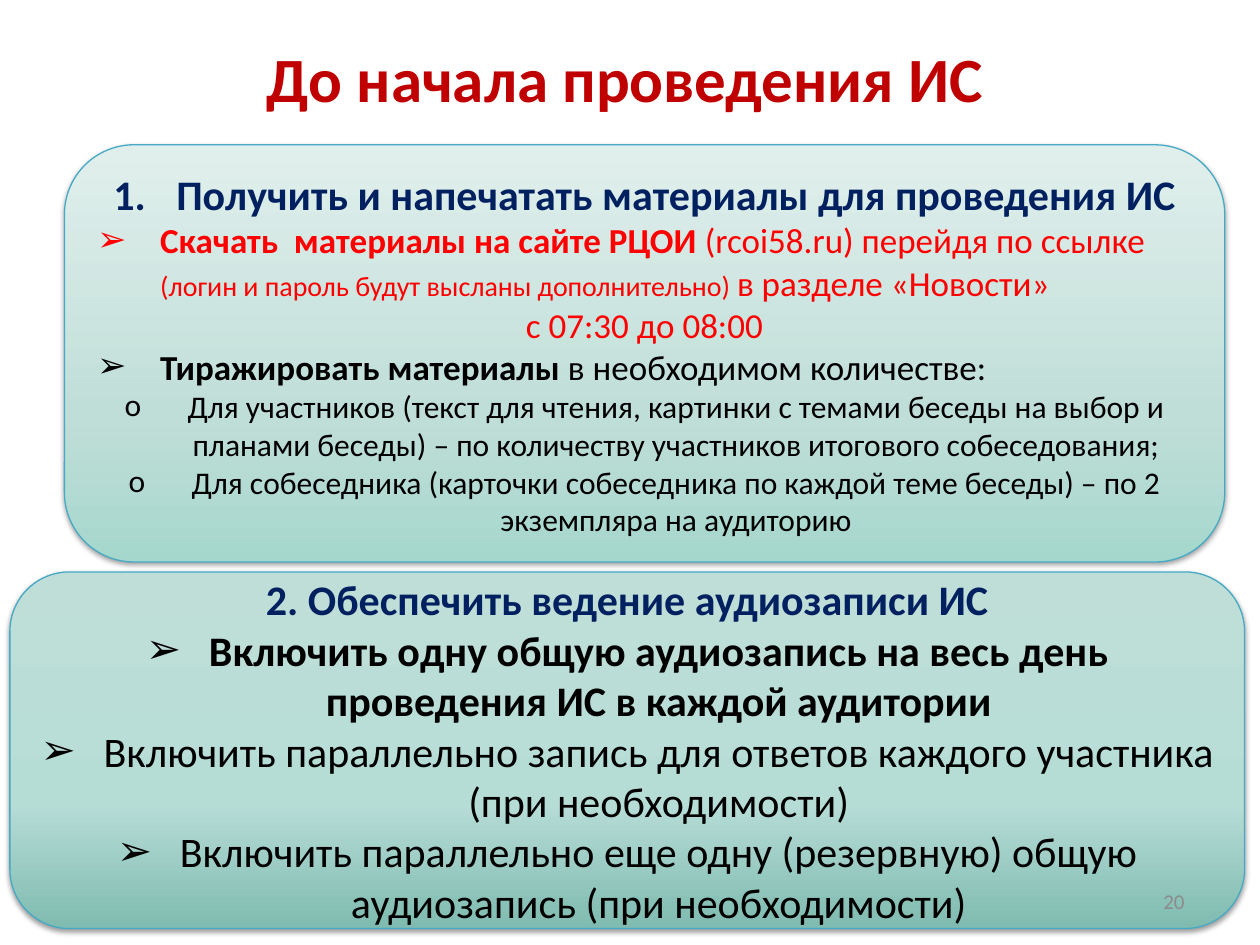
"""Build the slide on preparing for the final interview (ИС)."""
from lxml import etree
from pptx import Presentation
from pptx.dml.color import RGBColor
from pptx.enum.shapes import MSO_SHAPE
from pptx.enum.text import MSO_ANCHOR, PP_ALIGN
from pptx.oxml import parse_xml
from pptx.oxml.ns import qn
from pptx.util import Cm, Pt

LEFT, CENTER, RIGHT = PP_ALIGN.LEFT, PP_ALIGN.CENTER, PP_ALIGN.RIGHT
MIDDLE = MSO_ANCHOR.MIDDLE
ROUNDED = MSO_SHAPE.ROUNDED_RECTANGLE
NS = 'xmlns:a="http://schemas.openxmlformats.org/drawingml/2006/main"'
COLORS = {
    "title": "C00000", "heading": "002060", "alert": "FF0000",
    "body": "000000", "number": "8C8C8C", "outline": "46AAC5",
}
INDENT = Cm(1.27)
NUMBER, ARROW, CIRCLE = "1.", "➢", "o"


def write_paragraph(paragraph, runs, size, color, align=CENTER, bold=None, bullet=None, indent=0):
    """Fill a paragraph with (text, overrides) runs, a hanging indent and a bullet."""
    paragraph.alignment = align
    properties = paragraph._p.get_or_add_pPr()
    if indent:
        properties.set("marL", str(indent))
        properties.set("indent", str(-indent))
    if bullet == NUMBER:
        etree.SubElement(properties, qn("a:buAutoNum"), type="arabicPeriod")
    elif bullet:
        etree.SubElement(properties, qn("a:buFont"), typeface="Calibri")
        etree.SubElement(properties, qn("a:buChar"), char=bullet)
    font = paragraph.font
    font.name, font.size, font.bold = "Calibri", Pt(size), bold
    font.color.rgb = RGBColor.from_string(COLORS[color])
    for text, overrides in runs:
        run = paragraph.add_run()
        run.text = text
        if "size" in overrides:
            run.font.size = Pt(overrides["size"])
        if "bold" in overrides:
            run.font.bold = overrides["bold"]


def add_label(slide, place, text, **style):
    """Add a one-line text box, centred vertically."""
    frame = slide.shapes.add_textbox(*map(Cm, place)).text_frame
    frame.word_wrap = True
    frame.vertical_anchor = MIDDLE
    write_paragraph(frame.paragraphs[0], [(text, {})], **style)


presentation = Presentation()
presentation.slide_width, presentation.slide_height = Cm(25.4), Cm(19.05)
slide = presentation.slides.add_slide(presentation.slide_layouts[6])

add_label(slide, (2.11, 0.74, 20.98, 1.65), "До начала проведения ИС",
          size=36, color="title", bold=True)

BOLD = {"bold": True}
materials = [
    ([("Получить и напечатать материалы для проведения ИС", {})],
     dict(size=24, color="heading", bold=True, bullet=NUMBER)),
    ([("Скачать  материалы на сайте РЦОИ", BOLD),
      (" (rcoi58.ru) перейдя по ссылке", {}),
      (" (логин и пароль будут высланы дополнительно) ", {"size": 16}),
      ("в разделе «Новости»", {})],
     dict(size=20, color="alert", align=LEFT, bullet=ARROW)),
    ([("с 07:30 до 08:00", {})], dict(size=20, color="alert")),
    ([("Тиражировать материалы", BOLD), (" в необходимом количестве:", {})],
     dict(size=20, color="body", align=LEFT, bullet=ARROW)),
    ([("Для участников (текст для чтения, картинки с темами беседы на выбор и "
       "планами беседы) – по количеству участников итогового собеседования;", {})],
     dict(size=18, color="body", bullet=CIRCLE)),
    ([("Для собеседника (карточки собеседника по каждой теме беседы) – по 2 "
       "экземпляра на аудиторию", {})],
     dict(size=18, color="body", bullet=CIRCLE)),
]
recording = [
    ([("2. Обеспечить ведение аудиозаписи ИС", {})],
     dict(size=24, color="heading", bold=True)),
    ([("Включить одну общую аудиозапись на весь день проведения ИС в каждой аудитории", {})],
     dict(size=24, color="body", bold=True, bullet=ARROW)),
    ([("Включить параллельно запись для ответов каждого участника (при необходимости)", {})],
     dict(size=24, color="body", bullet=ARROW)),
    ([("Включить параллельно еще одну (резервную) общую аудиозапись (при необходимости)", {})],
     dict(size=24, color="body", bullet=ARROW)),
]
steps = [
    ((1.3, 2.92, 23.39, 8.41), ("A5D7CD", "C0DED8", "E1EFEC"), materials),
    ((0.2, 11.53, 24.89, 7.19), ("7FBBB0", "B6DCD6", "C0DED8"), recording),
]

for place, shades, paragraphs in steps:
    panel = slide.shapes.add_shape(ROUNDED, *map(Cm, place))
    panel.line.color.rgb = RGBColor.from_string(COLORS["outline"])
    panel.line.width = Pt(0.75)
    stops = "".join(
        f'<a:gs pos="{share * 1000}"><a:srgbClr val="{shade}"/></a:gs>'
        for share, shade in zip((0, 35, 100), shades))
    outline = panel.line._ln
    outline.addprevious(parse_xml(
        f'<a:gradFill {NS} rotWithShape="1"><a:gsLst>{stops}</a:gsLst>'
        '<a:lin ang="16200000" scaled="1"/></a:gradFill>'))
    outline.addnext(parse_xml(
        f'<a:effectLst {NS}><a:outerShdw blurRad="{Pt(3.1)}" dist="{Pt(1.6)}" dir="5400000" '
        'rotWithShape="0"><a:srgbClr val="000000"><a:alpha val="38000"/></a:srgbClr>'
        '</a:outerShdw></a:effectLst>'))
    frame = panel.text_frame
    frame.word_wrap = True
    frame.vertical_anchor = MIDDLE
    for index, (runs, style) in enumerate(paragraphs):
        paragraph = frame.add_paragraph() if index else frame.paragraphs[0]
        write_paragraph(paragraph, runs, indent=INDENT, **style)

add_label(slide, (18.2, 17.66, 5.93, 1.01), "20", size=12, color="number", align=RIGHT)

presentation.save("out.pptx")
